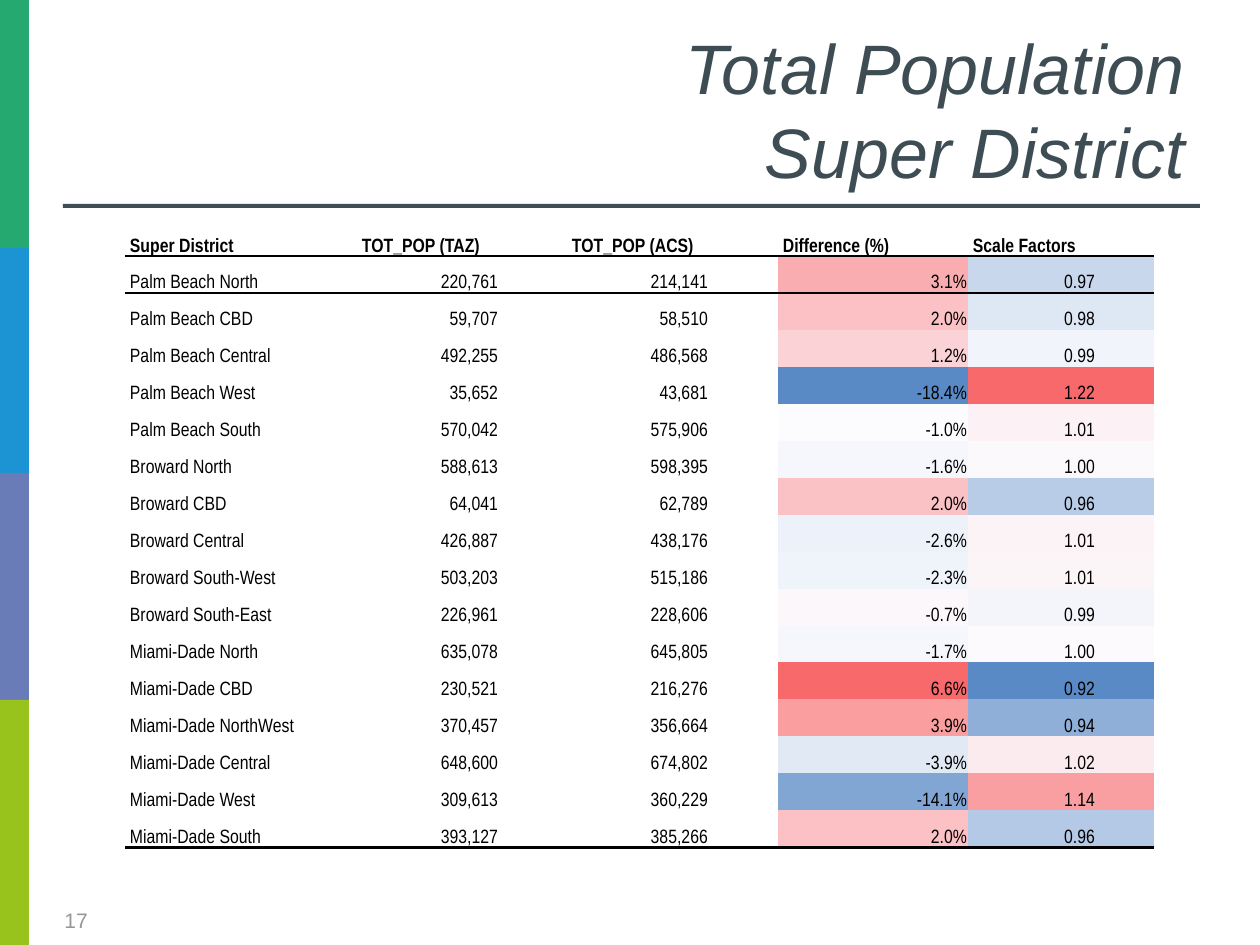
from lxml import etree
from pptx import Presentation
from pptx.dml.color import RGBColor
from pptx.enum.shapes import MSO_SHAPE
from pptx.enum.text import MSO_ANCHOR, PP_ALIGN
from pptx.oxml.ns import qn
from pptx.util import Emu, Pt

RECTANGLE = MSO_SHAPE.RECTANGLE
BOTTOM, MIDDLE = MSO_ANCHOR.BOTTOM, MSO_ANCHOR.MIDDLE
LEFT, RIGHT = PP_ALIGN.LEFT, PP_ALIGN.RIGHT

GREEN = RGBColor(0x26, 0xA8, 0x71)
BLUE = RGBColor(0x1C, 0x93, 0xD2)
PURPLE = RGBColor(0x6A, 0x7C, 0xB8)
LIME = RGBColor(0x97, 0xC3, 0x1C)
RULE = RGBColor(0x3F, 0x4D, 0x55)
TITLE = RGBColor(0x3E, 0x4D, 0x54)
GRAY = RGBColor(0x93, 0x97, 0x99)
BLACK = RGBColor(0, 0, 0)

EMU_PER_PX = 914400 // 126
NO_STYLE = "{2D5ABB26-0587-4C30-8999-92F81FD0307C}"

BARS = [
    (0, 0, 29, 248, GREEN),
    (0, 248, 29, 225, BLUE),
    (0, 473, 29, 227, PURPLE),
    (0, 700, 29, 245, LIME),
    (63, 204, 1137, 4, RULE),
]

HEADERS = ["Super District", "TOT_POP (TAZ)", "TOT_POP (ACS)", "Difference (%)", "Scale Factors"]
COLUMN_WIDTHS = [232, 210, 211, 190, 186]
RIGHT_MARGINS = [1, 69, 70, 1, 59]
HEADER_HEIGHT, ROW_HEIGHT = 25, 37

DISTRICTS = [
    ("Palm Beach North", "220,761", "214,141", "3.1%", "0.97", "FAADB0", "C8D7EC"),
    ("Palm Beach CBD", "59,707", "58,510", "2.0%", "0.98", "FBC1C4", "DEE7F4"),
    ("Palm Beach Central", "492,255", "486,568", "1.2%", "0.99", "FBD2D5", "F1F4FB"),
    ("Palm Beach West", "35,652", "43,681", "-18.4%", "1.22", "5A8AC6", "F8696B"),
    ("Palm Beach South", "570,042", "575,906", "-1.0%", "1.01", "FCFCFF", "FCF2F5"),
    ("Broward North", "588,613", "598,395", "-1.6%", "1.00", "F6F7FC", "FCF9FC"),
    ("Broward CBD", "64,041", "62,789", "2.0%", "0.96", "FBC2C5", "B8CCE7"),
    ("Broward Central", "426,887", "438,176", "-2.6%", "1.01", "EDF1F9", "FCF3F6"),
    ("Broward South-West", "503,203", "515,186", "-2.3%", "1.01", "EFF3FA", "FCF5F8"),
    ("Broward South-East", "226,961", "228,606", "-0.7%", "0.99", "FCF7FA", "F3F5FB"),
    ("Miami-Dade North", "635,078", "645,805", "-1.7%", "1.00", "F6F7FC", "FCFAFD"),
    ("Miami-Dade CBD", "230,521", "216,276", "6.6%", "0.92", "F8696B", "5A8AC6"),
    ("Miami-Dade NorthWest", "370,457", "356,664", "3.9%", "0.94", "FA9EA0", "8FAFD8"),
    ("Miami-Dade Central", "648,600", "674,802", "-3.9%", "1.02", "E1E9F5", "FCEBEE"),
    ("Miami-Dade West", "309,613", "360,229", "-14.1%", "1.14", "82A6D4", "FA9FA1"),
    ("Miami-Dade South", "393,127", "385,266", "2.0%", "0.96", "FBC1C4", "B4C9E5"),
]


def px(value):
    return Emu(value * EMU_PER_PX)


def style_text(para, font_name, size, color, align=LEFT, bold=False, italic=False):
    para.alignment = align
    for span in para.runs:
        font = span.font
        font.name, font.size = font_name, Pt(size)
        font.bold, font.italic = bold, italic
        font.color.rgb = color


def add_text(slide, text, frame, anchor, **style):
    box = slide.shapes.add_textbox(*map(px, frame))
    box.text_frame.word_wrap = True
    box.text_frame.vertical_anchor = anchor
    box.text_frame.text = text
    para = box.text_frame.paragraphs[0]
    style_text(para, "Arial", **style)
    return para


def add_border(cell, side, points):
    line = etree.Element(qn(f"a:{side}"), w=str(Pt(points)))
    fill = etree.SubElement(line, qn("a:solidFill"))
    etree.SubElement(fill, qn("a:srgbClr"), val=str(BLACK))
    cell._tc.get_or_add_tcPr().insert(0, line)


def fill_cell(cell, text, right_margin, align, bold, color):
    cell.margin_left, cell.margin_right = px(5), px(right_margin)
    cell.margin_top, cell.margin_bottom = px(1), 0
    cell.vertical_anchor = BOTTOM
    cell.text_frame.text = text
    style_text(cell.text_frame.paragraphs[0], "Arial Narrow", 11, BLACK, align, bold)
    if color:
        cell.fill.solid()
        cell.fill.fore_color.rgb = RGBColor.from_string(color)
    else:
        cell.fill.background()


def add_population_table(slide):
    heights = [HEADER_HEIGHT] + [ROW_HEIGHT] * len(DISTRICTS)
    frame = slide.shapes.add_table(
        len(heights), len(HEADERS), px(125), px(231), px(sum(COLUMN_WIDTHS)), px(sum(heights))
    )
    table = frame.table
    table.first_row = table.horz_banding = False
    table._tbl.tblPr.find(qn("a:tableStyleId")).text = NO_STYLE
    for column, width in zip(table.columns, COLUMN_WIDTHS):
        column.width = px(width)
    for row, height in zip(table.rows, heights):
        row.height = px(height)

    last_row = len(DISTRICTS)
    for column, header in enumerate(HEADERS):
        fill_cell(table.cell(0, column), header, 1, LEFT, True, None)
        add_border(table.cell(0, column), "lnB", 1)
        add_border(table.cell(last_row, column), "lnB", 2)
    for row, (*values, difference_color, scale_color) in enumerate(DISTRICTS, 1):
        colors = [None, None, None, difference_color, scale_color]
        for column, (value, margin, color) in enumerate(zip(values, RIGHT_MARGINS, colors)):
            align = RIGHT if column else LEFT
            fill_cell(table.cell(row, column), value, margin, align, False, color)
    for column in range(len(HEADERS)):
        add_border(table.cell(1, column), "lnT", 1)


def main():
    deck = Presentation()
    deck.slide_width, deck.slide_height = px(1260), px(945)
    slide = deck.slides.add_slide(deck.slide_layouts[6])
    for *frame, color in BARS:
        bar = slide.shapes.add_shape(RECTANGLE, *map(px, frame))
        bar.shadow.inherit = False
        bar.fill.solid()
        bar.fill.fore_color.rgb = color
        bar.line.fill.background()
    title = add_text(slide, "Total Population\vSuper District", (63, -1, 1134, 200), BOTTOM,
                     size=40, color=TITLE, align=RIGHT, italic=True)
    title.line_spacing = Pt(48)
    add_text(slide, "17", (52, 895, 92, 50), MIDDLE, size=12, color=GRAY)
    add_population_table(slide)
    deck.save("out.pptx")


if __name__ == "__main__":
    main()
